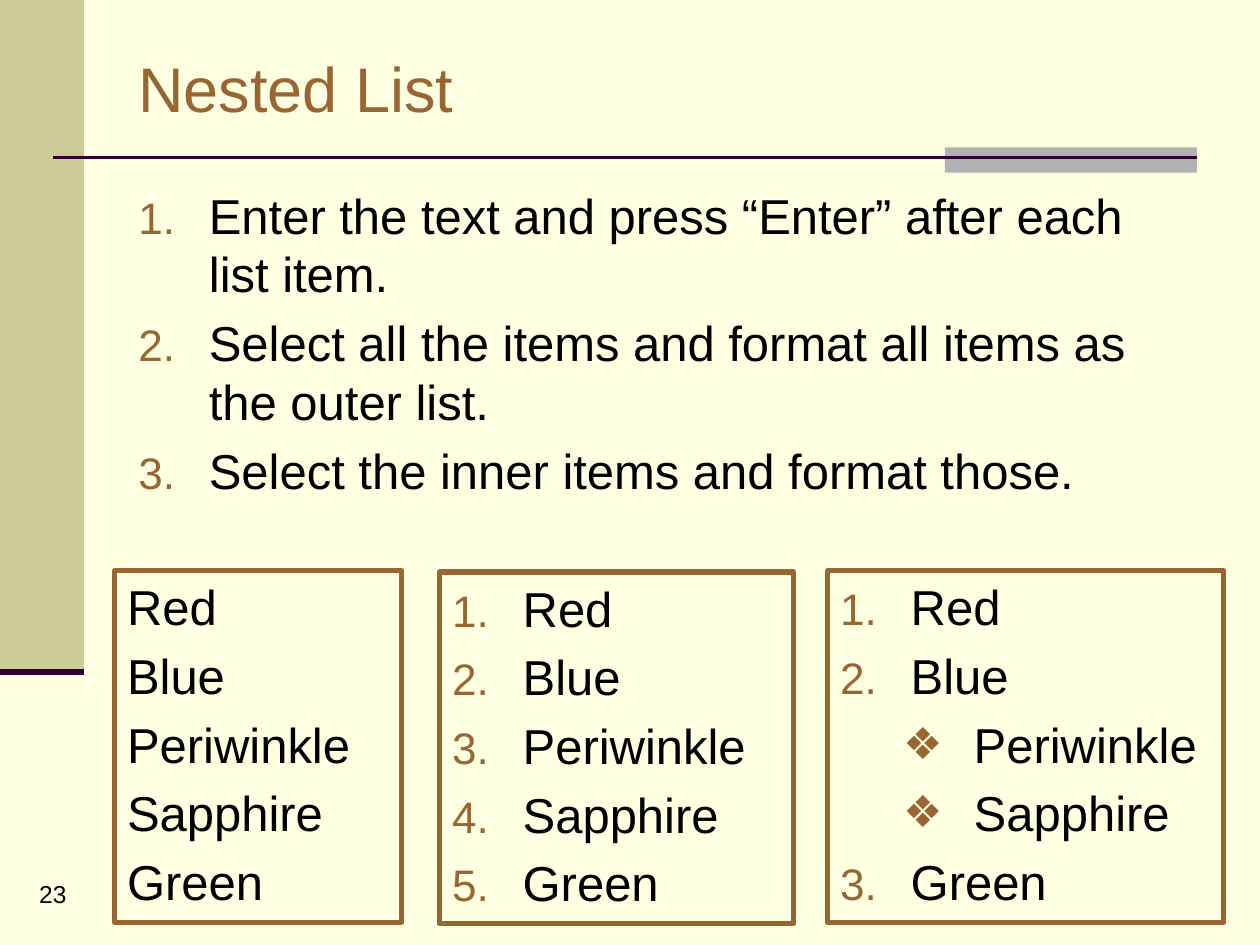
from lxml import etree
from pptx import Presentation
from pptx.dml.color import RGBColor
from pptx.enum.shapes import MSO_CONNECTOR, MSO_SHAPE
from pptx.enum.text import MSO_ANCHOR, PP_ALIGN
from pptx.oxml.ns import qn
from pptx.util import Inches, Pt

RECTANGLE = MSO_SHAPE.RECTANGLE
STRAIGHT = MSO_CONNECTOR.STRAIGHT
TOP, MIDDLE = MSO_ANCHOR.TOP, MSO_ANCHOR.MIDDLE
LEFT, CENTER = PP_ALIGN.LEFT, PP_ALIGN.CENTER

CREAM = RGBColor(0xFF, 0xFF, 0xE1)
OLIVE = RGBColor(0xCC, 0xCC, 0x99)
GRAY = RGBColor(0xB2, 0xB2, 0xB2)
PLUM = RGBColor(0x33, 0x00, 0x33)
BROWN = RGBColor(0x99, 0x66, 0x33)
BLACK = RGBColor(0x00, 0x00, 0x00)

WIDTH, HEIGHT = Inches(10), Inches(7.5)
COLUMNS, ROWS = 100, 75
HANGING = Inches(0.56)
LEVEL_STEP = Inches(0.5)

TITLE_FONT = {"name": "Arial", "size": Pt(36)}
BODY_FONT = {"name": "Arial", "size": Pt(28)}
NUMBER_FONT = {"name": "Arial", "size": Pt(14)}
LIST_FORMAT = {"alignment": LEFT, "space_before": Pt(5.6)}

STEPS = [
    "Enter the text and press “Enter” after each list item.",
    "Select all the items and format all items as the outer list.",
    "Select the inner items and format those.",
]
COLORS = ["Red", "Blue", "Periwinkle", "Sapphire", "Green"]
INNER_COLORS = {"Periwinkle", "Sapphire"}
NUMBERED = ("buAutoNum", {"type": "arabicPeriod"})
DIAMOND = ("buChar", {"char": "❖"})


def column(count):
    return round(WIDTH * count / COLUMNS)


def row(count):
    return round(HEIGHT * count / ROWS)


def place(left, top, width, height):
    return column(left), row(top), column(width), row(height)


def set_attributes(target, values):
    for name, value in values.items():
        setattr(target, name, value)


def add_block(slide, area, color):
    shape = slide.shapes.add_shape(RECTANGLE, *place(*area))
    shape.shadow.inherit = False
    shape.fill.solid()
    shape.fill.fore_color.rgb = color
    shape.line.fill.background()


def add_rule(slide, start, end, height, width):
    line = slide.shapes.add_connector(
        STRAIGHT, column(start), row(height), column(end), row(height))
    set_attributes(line.line, {"width": Pt(width)})
    line.line.color.rgb = PLUM
    etree.SubElement(line._element.spPr, qn("a:effectLst"))


def add_text_box(slide, area):
    shape = slide.shapes.add_textbox(*place(*area))
    shape.text_frame.word_wrap = True
    return shape


def add_frame(slide, area):
    shape = slide.shapes.add_shape(RECTANGLE, *place(*area))
    shape.shadow.inherit = False
    shape.fill.background()
    shape.line.width = Pt(3)
    shape.line.color.rgb = BROWN
    set_attributes(shape.text_frame, {"word_wrap": True, "vertical_anchor": TOP})
    return shape


def write(paragraph, text, font, color):
    run = paragraph.add_run()
    run.text = text
    set_attributes(run.font, font)
    run.font.color.rgb = color


def add_bullet(properties, bullet):
    tag, values = bullet
    color = etree.SubElement(properties, qn("a:buClr"))
    etree.SubElement(color, qn("a:srgbClr"), val=str(BROWN))
    etree.SubElement(properties, qn("a:buSzPct"), val="90000")
    etree.SubElement(properties, qn("a:buFont"), typeface="Arial")
    etree.SubElement(properties, qn(f"a:{tag}"), values)


def write_list(shape, items, numbered=True, inner=()):
    frame = shape.text_frame
    for index, text in enumerate(items):
        paragraph = frame.add_paragraph() if index else frame.paragraphs[0]
        level = int(text in inner)
        set_attributes(paragraph, {**LIST_FORMAT, "level": level})
        properties = paragraph._p.get_or_add_pPr()
        properties.set("marL", str(HANGING + level * LEVEL_STEP))
        properties.set("indent", str(-HANGING))
        if numbered:
            add_bullet(properties, DIAMOND if level else NUMBERED)
        write(paragraph, text, BODY_FONT, BLACK)


def add_label(slide, area, text, font, color, anchor, alignment):
    frame = add_text_box(slide, area).text_frame
    frame.vertical_anchor = anchor
    frame.paragraphs[0].alignment = alignment
    write(frame.paragraphs[0], text, font, color)


def main():
    presentation = Presentation()
    set_attributes(presentation, {"slide_width": WIDTH, "slide_height": HEIGHT})
    slide = presentation.slides.add_slide(presentation.slide_layouts[6])
    slide.background.fill.solid()
    slide.background.fill.fore_color.rgb = CREAM

    add_block(slide, (0, 0, 6.67, 53.3), OLIVE)
    add_block(slide, (75, 11.7, 20, 2), GRAY)
    add_rule(slide, 4.2, 95, 12.5, 1.5)
    add_rule(slide, 0, 6.67, 53.3, 3.5)

    add_label(slide, (10, 3, 85, 7.8), "Nested List", TITLE_FONT, BROWN, MIDDLE, LEFT)
    write_list(add_text_box(slide, (10, 14.2, 85, 27.9)), STEPS)
    add_label(slide, (1.6, 69.3, 5.2, 3.3), "23", NUMBER_FONT, BLACK, TOP, CENTER)

    write_list(add_frame(slide, (9.1, 45.3, 22.8, 27.9)), COLORS, numbered=False)
    write_list(add_frame(slide, (34.9, 45.4, 28.1, 27.9)), COLORS)
    write_list(add_frame(slide, (65.7, 45.3, 31.4, 27.9)), COLORS, inner=INNER_COLORS)
    presentation.save("out.pptx")


if __name__ == "__main__":
    main()
